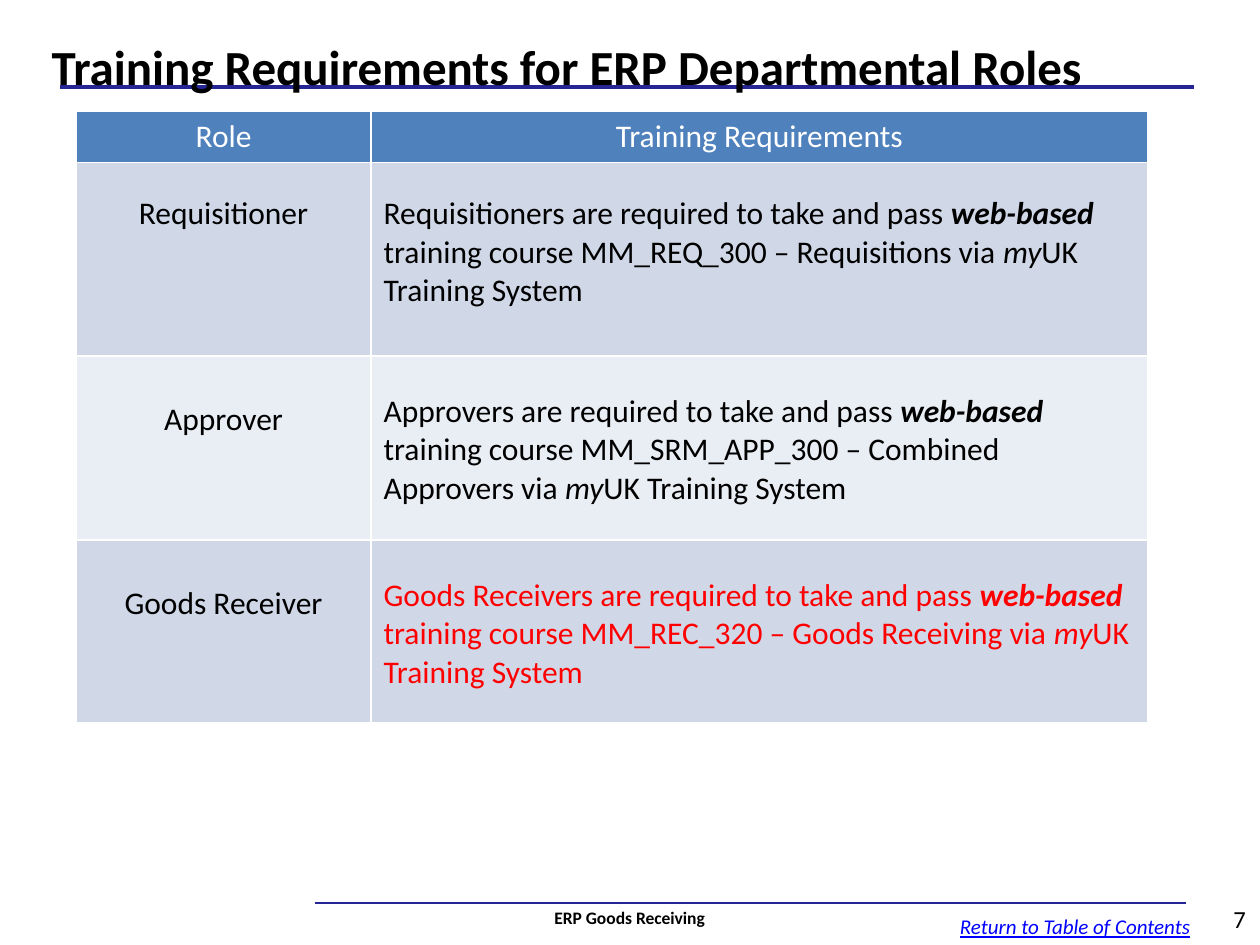
from lxml.etree import SubElement
from pptx import Presentation
from pptx.dml.color import RGBColor
from pptx.enum.shapes import MSO_CONNECTOR as Connector
from pptx.enum.text import MSO_ANCHOR as Anchor, PP_ALIGN as Align
from pptx.oxml.ns import qn
from pptx.util import Pt


def color(hex_string):
    return RGBColor.from_string(hex_string)


def add_run(paragraph, text, size, hex_color="000000", bold=False, italic=False):
    run = paragraph.add_run()
    run.text = text
    font = run.font
    font.name, font.size = "Calibri", Pt(size)
    font.bold, font.italic = bold, italic
    font.color.rgb = color(hex_color)
    return run


presentation = Presentation()
presentation.slide_width, presentation.slide_height = Pt(720), Pt(540)
slide = presentation.slides.add_slide(presentation.slide_layouts[6])

# Rules under the title and above the footer
for left, right, top, width in [(34.5, 682.5, 49.5, 2.25), (180, 678, 516, 1.5)]:
    rule = slide.shapes.add_connector(
        Connector.STRAIGHT, Pt(left), Pt(top), Pt(right), Pt(top))
    rule.line.color.rgb = color("252595")
    rule.line.width = Pt(width)
    SubElement(rule.element.spPr, qn("a:effectLst"))

# Title, link and footer texts
texts = [
    ("Training Requirements for ERP Departmental Roles",
     (22.5, 6.5, 661.5, 57.5), 28, "000000", True, Align.LEFT, Anchor.MIDDLE),
    ("Return to Table of Contents",
     (541.5, 518.5, 147, 21.5), 12, "0000FF", False, Align.LEFT, Anchor.TOP),
    ("7", (676, 510.5, 43, 29), 14, "000000", False, Align.RIGHT, Anchor.MIDDLE),
    ("ERP Goods Receiving",
     (144.5, 510, 430.5, 29), 10, "000000", True, Align.CENTER, Anchor.MIDDLE),
]
for text, bounds, size, hex_color, bold, alignment, anchor in texts:
    shape = slide.shapes.add_textbox(*map(Pt, bounds))
    is_link = text.startswith("Return")
    shape.text_frame.word_wrap = not is_link
    shape.text_frame.vertical_anchor = anchor
    paragraph = shape.text_frame.paragraphs[0]
    paragraph.alignment = alignment
    run = add_run(paragraph, text, size, hex_color, bold, italic=is_link)
    run.font.underline = is_link
    if size == 28:
        paragraph.line_spacing = 1.15
        paragraph.space_after = Pt(6)

# Table of roles
column_widths = [168.5, 444]
row_heights = [29.5, 110.5, 105, 104.5]
table = slide.shapes.add_table(
    4, 2, Pt(43.5), Pt(63.5), Pt(sum(column_widths)), Pt(sum(row_heights))).table
for column, width in zip(table.columns, column_widths):
    column.width = Pt(width)
for row, height in zip(table.rows, row_heights):
    row.height = Pt(height)

for cell, heading in zip(table.rows[0].cells, ["Role", "Training Requirements"]):
    paragraph = cell.text_frame.paragraphs[0]
    paragraph.alignment = Align.CENTER
    add_run(paragraph, heading, 18, "FFFFFF")

# Role, course, text colour, top margins of the two cells
roles = [
    ("Requisitioner", "MM_REQ_300 – Requisitions", "000000", (18.25, 18.25)),
    ("Approver", "MM_SRM_APP_300 – Combined Approvers", "000000", (25.5, 20.75)),
    ("Goods Receiver", "MM_REC_320 – Goods Receiving", "FF0000", (25.5, 20.75)),
]
for row_index, (role, course, hex_color, margins) in enumerate(roles, start=1):
    role_cell, training_cell = table.rows[row_index].cells
    role_cell.margin_top, training_cell.margin_top = map(Pt, margins)
    paragraph = role_cell.text_frame.paragraphs[0]
    paragraph.alignment = Align.CENTER
    add_run(paragraph, role, 18)

    paragraph = training_cell.text_frame.paragraphs[0]
    for text, bold, italic in [
        (f"{role}s are required to take and pass ", False, False),
        ("web-based", True, True),
        (f" training course {course} via ", False, False),
        ("my", False, True),
        ("UK Training System", False, False),
    ]:
        add_run(paragraph, text, 18, hex_color, bold, italic)

# Fills and white cell borders
for row, fill in zip(table.rows, ["4F81BD", "D0D8E8", "E9EDF4", "D0D8E8"]):
    for cell in row.cells:
        properties = cell._tc.get_or_add_tcPr()
        for side in ("a:lnL", "a:lnR", "a:lnT", "a:lnB"):
            border = SubElement(properties, qn(side), w=str(Pt(1)))
            border_fill = SubElement(border, qn("a:solidFill"))
            SubElement(border_fill, qn("a:srgbClr"), val="FFFFFF")
        cell.fill.solid()
        cell.fill.fore_color.rgb = color(fill)

presentation.save("out.pptx")
